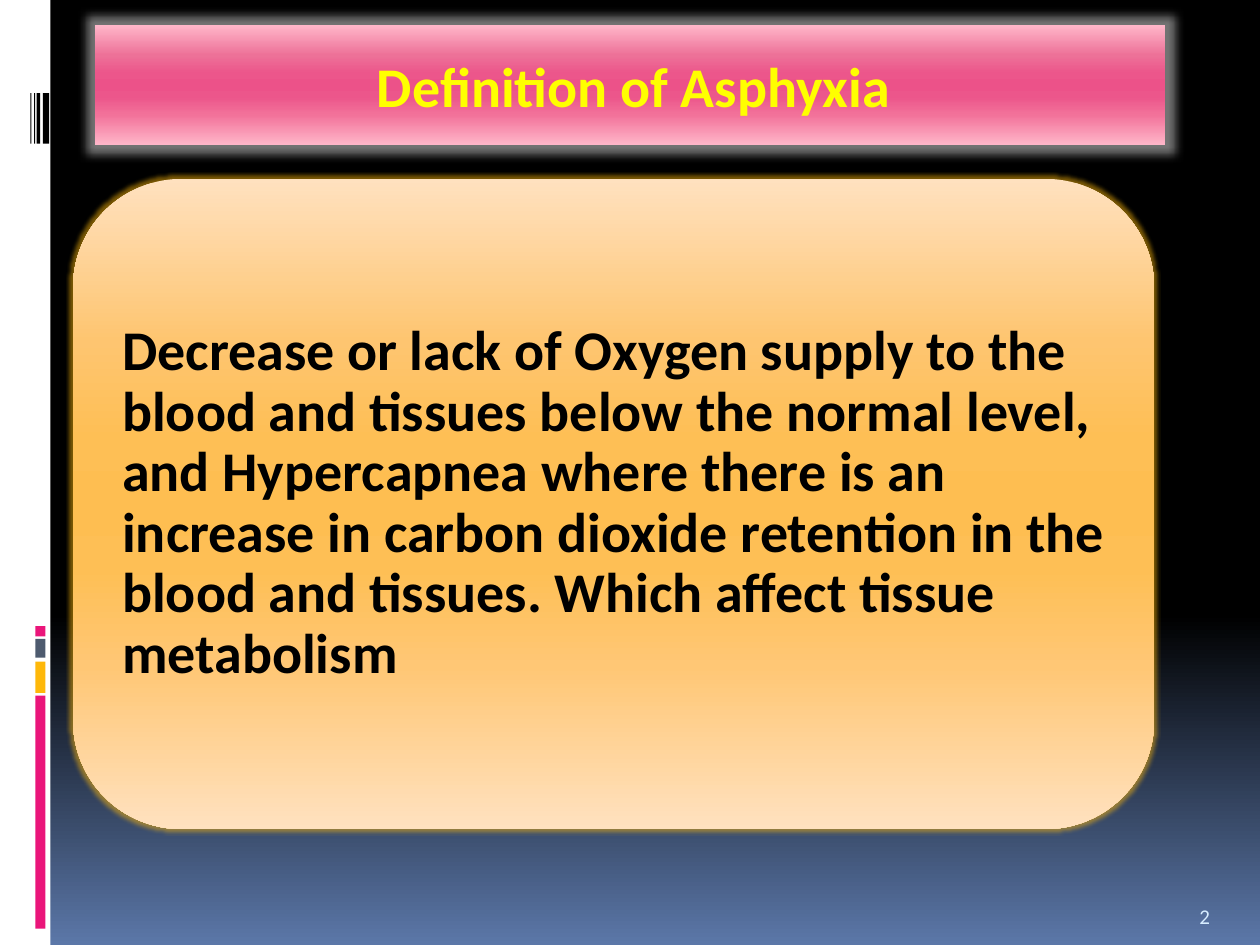
from dataclasses import dataclass

from lxml.etree import SubElement
from pptx import Presentation
from pptx.dml.color import RGBColor
from pptx.enum.shapes import MSO_SHAPE as Preset
from pptx.enum.text import MSO_ANCHOR as Anchor, MSO_AUTO_SIZE as AutoSize, PP_ALIGN as Align
from pptx.oxml.ns import qn
from pptx.util import Inches, Pt

COLUMNS, ROWS = 100, 75


@dataclass(frozen=True)
class Theme:
    font: str = "Calibri"
    large: int = 32
    small: int = 12
    black: str = "000000"
    white: str = "FFFFFF"
    pink: str = "EA157A"
    amber: str = "FEB80A"
    slate: str = "4E5B6F"
    yellow: str = "FFFF00"
    pale: str = "D6ECFF"
    night: tuple = ((0, "000000"), (65, "000000"), (100, "5B77A8"))
    rose: tuple = ((0, "FFB6C9"), (25, "ED7198"), (40, "EC568B"), (50, "EC5289"),
                   (60, "EC568B"), (75, "F2729A"), (100, "FFB6C9"))
    honey: tuple = ((0, "FFE1BF"), (25, "FEC570"), (40, "FEBF55"), (50, "FEBE51"),
                    (60, "FEBF55"), (75, "FFC775"), (100, "FFE1BF"))


def write_text(shape, text, size, color, bold=False, align=Align.LEFT,
               anchor=Anchor.MIDDLE, margin=None, indent=0, line_spacing=1, after=0):
    frame = shape.text_frame
    frame.word_wrap = True
    frame.auto_size = AutoSize.NONE
    frame.vertical_anchor = anchor
    if margin is not None:
        frame.margin_left = frame.margin_right = Inches(margin)
        frame.margin_top = frame.margin_bottom = Inches(margin)
    paragraph = frame.paragraphs[0]
    paragraph.alignment = align
    paragraph.line_spacing = line_spacing
    paragraph.space_before = Pt(0)
    paragraph.space_after = Pt(after)
    properties = paragraph._p.get_or_add_pPr()
    properties.set("marL", str(Inches(indent)))
    properties.set("indent", "0")
    SubElement(properties, qn("a:buNone"))
    run = paragraph.add_run()
    run.text = text
    run.font.name = Theme.font
    run.font.size = Pt(size)
    run.font.bold = bold
    run.font.color.rgb = RGBColor.from_string(color)


class SlideBuilder:
    def __init__(self, presentation, theme):
        self.theme = theme
        self.width = presentation.slide_width
        self.height = presentation.slide_height
        self.slide = presentation.slides.add_slide(presentation.slide_layouts[1])

    def box(self, left, top, width, height):
        return (round(left * self.width / COLUMNS), round(top * self.height / ROWS),
                round(width * self.width / COLUMNS), round(height * self.height / ROWS))

    def gradient(self, fill, element, stops):
        fill.gradient()
        fill.gradient_angle = 270
        stop_list = next(element.iter(qn("a:gsLst")))
        stop_list.clear()
        for position, color in stops:
            stop = SubElement(stop_list, qn("a:gs"), pos=str(position * 1000))
            SubElement(stop, qn("a:srgbClr"), val=color)

    def background(self, stops):
        self.gradient(self.slide.background.fill, self.slide.element, stops)

    def glow(self, shape, radius, color, opacity):
        shape.shadow.inherit = False
        effects = next(shape.element.iter(qn("a:effectLst")))
        glow = SubElement(effects, qn("a:glow"), rad=str(Inches(radius)))
        tint = SubElement(glow, qn("a:srgbClr"), val=color)
        SubElement(tint, qn("a:alpha"), val=str(opacity * 1000))

    def shape(self, place, color=None, preset=Preset.RECTANGLE):
        shape = self.slide.shapes.add_shape(preset, *self.box(*place))
        shape.shadow.inherit = False
        shape.line.fill.background()
        if color:
            shape.fill.solid()
            shape.fill.fore_color.rgb = RGBColor.from_string(color)
        return shape

    def card(self, place, stops):
        card = self.shape(place, preset=Preset.ROUNDED_RECTANGLE)
        self.gradient(card.fill, card.element, stops)
        self.glow(card, 0.05, self.theme.amber, 50)

    def placeholder(self, index, place, text, **style):
        shape = self.slide.placeholders[index]
        shape.left, shape.top, shape.width, shape.height = self.box(*place)
        self.slide.shapes.element.append(shape.element)
        write_text(shape, text, **style)
        return shape

    def title(self, place, text, stops):
        title = self.placeholder(0, place, text, size=self.theme.large, bold=True,
                                 color=self.theme.yellow, align=Align.CENTER, indent=0.06)
        self.gradient(title.fill, title.element, stops)
        self.glow(title, 0.15, self.theme.white, 45)

    def body(self, place, text):
        self.placeholder(1, place, text, size=self.theme.large, bold=True,
                         color=self.theme.black, margin=0.13, line_spacing=0.9, after=11)

    def label(self, place, text):
        label = self.slide.shapes.add_textbox(*self.box(*place))
        write_text(label, text, size=self.theme.small, color=self.theme.pale,
                   anchor=Anchor.BOTTOM)


def main():
    presentation = Presentation()
    presentation.slide_width, presentation.slide_height = Inches(10), Inches(7.5)
    theme = Theme()
    builder = SlideBuilder(presentation, theme)

    builder.background(theme.night)
    builder.shape((0, 0, 4, ROWS), theme.white)
    for top, height, color in ((55.2, 18.5, theme.pink), (52.5, 2.5, theme.amber),
                               (50.7, 1.5, theme.slate), (49.7, 0.8, theme.pink)):
        builder.shape((2.8, top, 0.8, height), color)
    for left, width in ((3.4, 0.5), (2.9, 0.3), (2.7, 0.1), (2.4, 0.1)):
        builder.shape((left, 7.4, width, 4), theme.black)

    builder.card((5.8, 14.2, 85.8, 51.6), theme.honey)
    builder.body((8.4, 16.7, 80.8, 46.6),
                 "Decrease or lack of Oxygen supply to the blood and tissues below the "
                 "normal level, and Hypercapnea where there is an increase in carbon "
                 "dioxide retention in the blood and tissues. Which affect tissue metabolism")
    builder.label((94.2, 70.2, 5, 4), "2")
    builder.title((7.5, 2, 85, 9.5), "Definition of Asphyxia", theme.rose)
    presentation.save("out.pptx")


if __name__ == "__main__":
    main()
